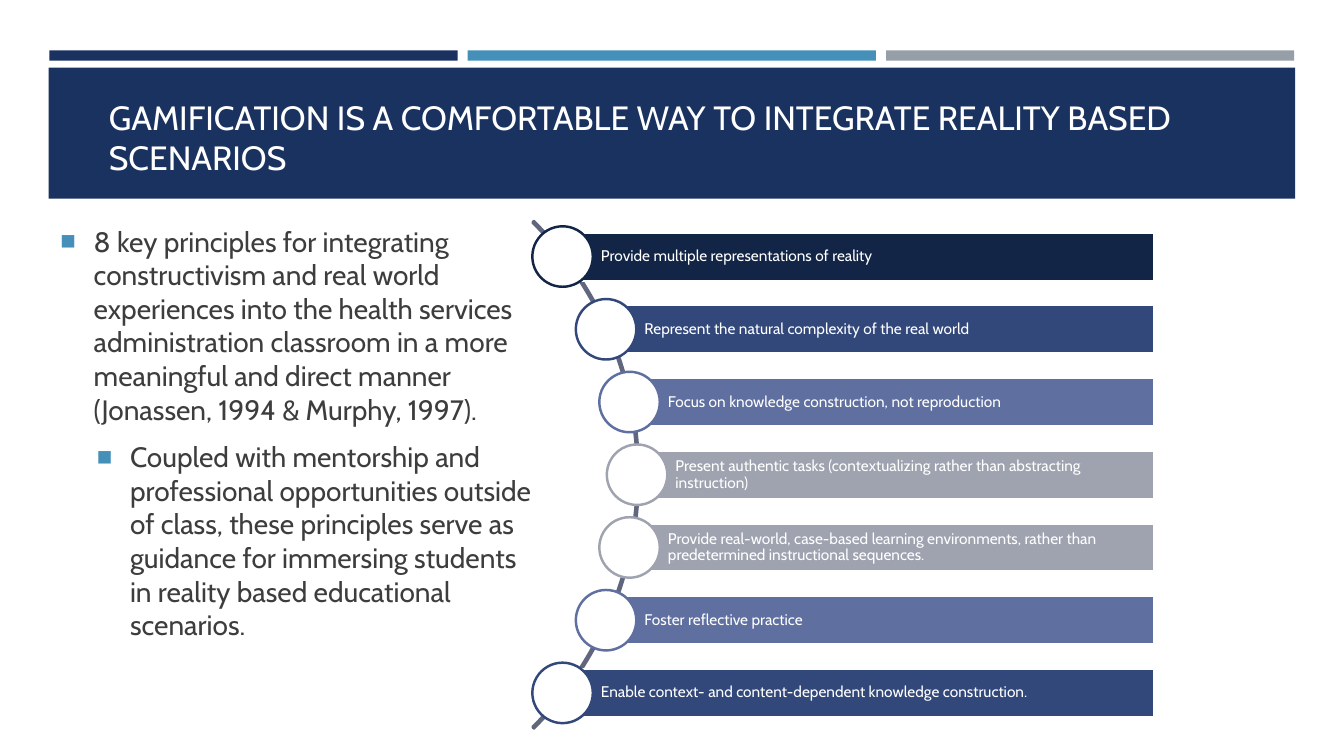
import math
from dataclasses import dataclass

import pptx
import pptx.dml.color
import pptx.enum.shapes
import pptx.enum.text
import pptx.oxml
import pptx.oxml.ns
import pptx.util

Pt = pptx.util.Pt
KIND = pptx.enum.shapes.MSO_SHAPE
ANCHOR = pptx.enum.text.MSO_ANCHOR
LEFT = pptx.enum.text.PP_ALIGN.LEFT
FONT = "Cabin"
HUES = {
    "navy": "1A3260", "sky": "4590B8", "grey": "969FA7", "white": "FFFFFF",
    "text": "3D3D3D", "arc": "60667D", "dark": "132547", "blue": "32487A",
    "slate": "5E6FA0", "mist": "9FA3B0",
}
MID_X, MID_Y = 200.16, 339.12
ARC_R, ROW_R = 256.32, 254.9
PITCH = 51.95
BAR_H, RING, EDGE = 34.6, 43.2, 824.4


@dataclass
class Rule:
    text: str
    hue: str


@dataclass
class Point:
    text: str
    level: int
    indent: float
    before: float


RULES = [
    Rule("Provide multiple representations of reality", "dark"),
    Rule("Represent the natural complexity of the real world", "blue"),
    Rule("Focus on knowledge construction, not reproduction", "slate"),
    Rule("Present authentic tasks (contextualizing rather than abstracting instruction)", "mist"),
    Rule("Provide real-world, case-based learning environments, rather than "
         "predetermined instructional sequences.", "mist"),
    Rule("Foster reflective practice", "slate"),
    Rule("Enable context- and content-dependent knowledge construction.", "blue"),
]
POINTS = [
    Point("8 key principles for integrating constructivism and real world experiences "
          "into the health services administration classroom in a more meaningful and "
          "direct manner (Jonassen, 1994 & Murphy, 1997).", 0, 23.76, 0),
    Point("Coupled with mentorship and professional opportunities outside of class, "
          "these principles serve as guidance for immersing students in reality based "
          "educational scenarios.", 1, 49.68, 4),
]


def color(hue: str) -> pptx.dml.color.RGBColor:
    return pptx.dml.color.RGBColor.from_string(HUES[hue])


def place(shape, left: float, top: float, width: float, height: float) -> None:
    shape.left, shape.top = Pt(left), Pt(top)
    shape.width, shape.height = Pt(width), Pt(height)


def draw(slide, kind, box: tuple, fill: str = "", line: str = ""):
    shape = slide.shapes.add_shape(kind, *map(Pt, box))
    shape.shadow.inherit = False
    if fill:
        shape.fill.solid()
        shape.fill.fore_color.rgb = color(fill)
    else:
        shape.fill.background()
    if line:
        shape.line.color.rgb = color(line)
        shape.line.width = Pt(1.75)
    else:
        shape.line.fill.background()
    return shape


def style(para, size: float, hue: str) -> None:
    para.alignment = LEFT
    para.font.name = FONT
    para.font.size = Pt(size)
    para.font.color.rgb = color(hue)


def bullet(para, indent: float) -> None:
    props = para._p.get_or_add_pPr()
    props.set("marL", str(Pt(indent)))
    props.set("indent", str(Pt(-23.76)))
    space = pptx.oxml.ns.nsdecls("a")
    for item in (
        f'<a:buClr {space}><a:srgbClr val="{HUES["sky"]}"/></a:buClr>',
        f'<a:buSzPct {space} val="92000"/>',
        f'<a:buChar {space} char="■"/>',
    ):
        props.append(pptx.oxml.parse_xml(item))


def head(slide) -> None:
    for col, hue in enumerate(("navy", "sky", "grey")):
        draw(slide, KIND.RECTANGLE, (35.28 + 298.8 * col, 36, 291.6, 7.4), hue)
    band = draw(slide, KIND.RECTANGLE, (34.7, 48.4, 890.5, 93.6), "navy")
    slide.shapes._spTree.insert(2, band._element)
    title = slide.shapes.title
    place(title, 70.56, 74.88, 854.64, 55.44)
    frame = title.text_frame
    frame.text = "GAMIFICATION IS A COMFORTABLE WAY TO INTEGRATE REALITY BASED SCENARIOS"
    frame.auto_size = pptx.enum.text.MSO_AUTO_SIZE.NONE
    frame.vertical_anchor = ANCHOR.BOTTOM
    style(frame.paragraphs[0], 24, "white")


def body(slide) -> None:
    holder = slide.placeholders[1]
    place(holder, 36, 156.4, 359.3, 310)
    frame = holder.text_frame
    frame.auto_size = pptx.enum.text.MSO_AUTO_SIZE.NONE
    frame.vertical_anchor = ANCHOR.TOP
    for num, point in enumerate(POINTS):
        para = frame.add_paragraph() if num else frame.paragraphs[0]
        para.text = point.text
        para.level = point.level
        para.space_before, para.space_after = Pt(point.before), Pt(6)
        bullet(para, point.indent)
        style(para, 20, "text")


def row(slide, rule: Rule, shift: float) -> None:
    x = MID_X + math.sqrt(ROW_R ** 2 - shift ** 2)
    y = MID_Y + shift
    bar = draw(slide, KIND.RECTANGLE, (x, y - BAR_H / 2, EDGE - x, BAR_H), rule.hue, "white")
    frame = bar.text_frame
    frame.word_wrap = True
    frame.vertical_anchor = ANCHOR.MIDDLE
    frame.margin_left = Pt(27.4)
    frame.margin_right = frame.margin_top = frame.margin_bottom = Pt(2.2)
    para = frame.paragraphs[0]
    para.text = rule.text
    para.line_spacing = 0.9
    style(para, 11, "white")
    draw(slide, KIND.OVAL, (x - RING / 2, y - RING / 2, RING, RING), "white", rule.hue)


def main() -> None:
    deck = pptx.Presentation()
    deck.slide_width, deck.slide_height = Pt(960), Pt(540)
    slide = deck.slides.add_slide(deck.slide_layouts[1])
    head(slide)
    body(slide)
    arc = draw(slide, KIND.BLOCK_ARC,
               (MID_X - ARC_R, MID_Y - ARC_R, 2 * ARC_R, 2 * ARC_R), line="arc")
    for num, value in enumerate((189, 27, 0.003)):
        arc.adjustments[num] = value
    for num, rule in enumerate(RULES):
        row(slide, rule, (num - len(RULES) // 2) * PITCH)
    deck.save("out.pptx")


if __name__ == "__main__":
    main()
